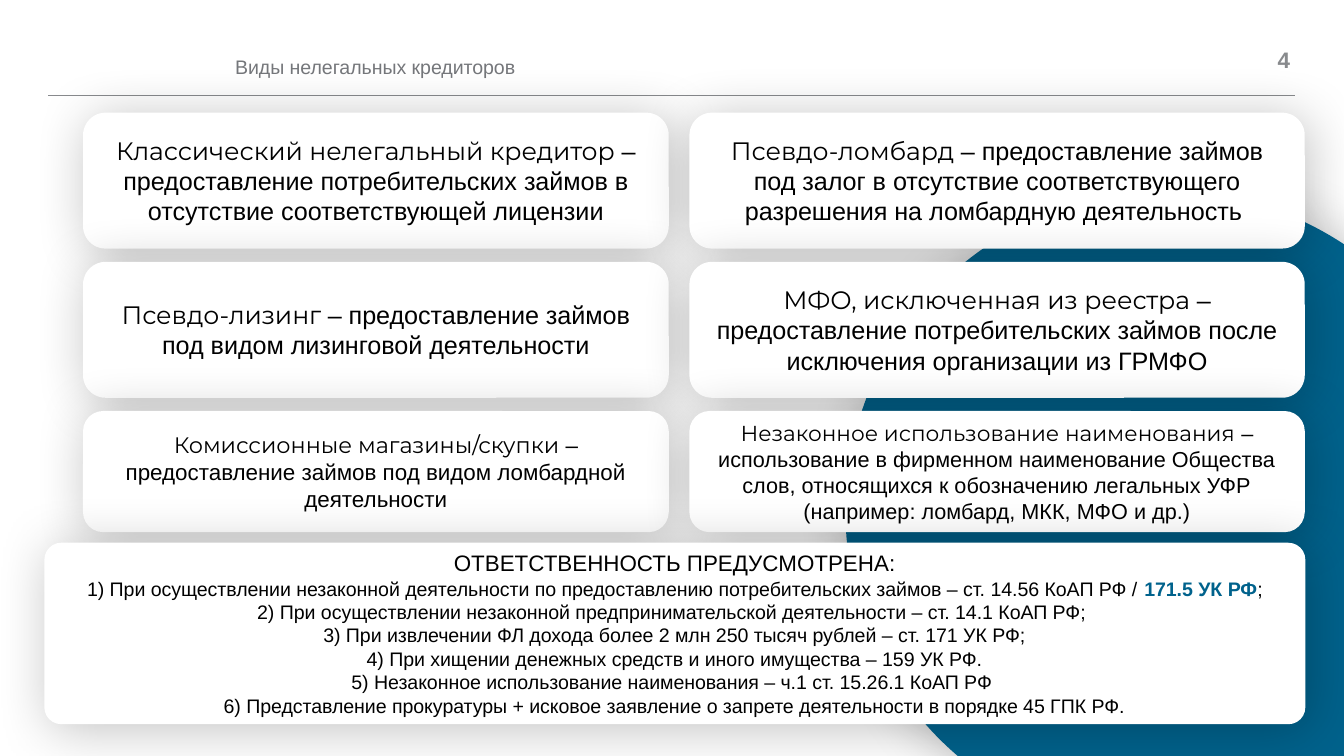
from lxml.etree import SubElement
from pptx import Presentation
from pptx.dml.color import RGBColor
from pptx.enum.shapes import MSO_CONNECTOR, MSO_SHAPE
from pptx.enum.text import MSO_ANCHOR, MSO_AUTO_SIZE, PP_ALIGN
from pptx.oxml.ns import qn
from pptx.util import Cm, Pt

COLORS = {"white": "FFFFFF", "black": "000000", "blue": "00628C",
          "rule": "888A8D", "heading": "75777B"}
BODY_FONT, TERM_FONT = "Arial", "Montserrat"

GAP = 0.25
COLUMNS = [(1.57, 11.07), (13.03, 11.63)]  # left, width
ROW_HEIGHTS = [2.57, 2.57, 2.29]
CARDS_TOP = 2.13

# Each row: (term, definition, text size) for the left and right card
CARDS = [
    [("Классический нелегальный кредитор ",
      "– предоставление потребительских займов в отсутствие соответствующей лицензии", 13.5),
     ("Псевдо-ломбард ",
      "– предоставление займов под залог в отсутствие соответствующего разрешения "
      "на ломбардную деятельность ", 13.5)],
    [("Псевдо-лизинг ",
      "– предоставление займов под видом лизинговой деятельности", 13.5),
     ("МФО, исключенная из реестра ",
      "– предоставление потребительских займов после исключения организации из ГРМФО", 13.5)],
    [("Комиссионные магазины/скупки ",
      "– предоставление займов под видом ломбардной деятельности", 12),
     ("Незаконное использование наименования ",
      "– использование в фирменном наименование Общества слов, относящихся к обозначению "
      "легальных УФР (например: ломбард, МКК, МФО и др.)", 11.6)],
]

PENALTY_HEADING = "ОТВЕТСТВЕННОСТЬ ПРЕДУСМОТРЕНА:"
KEY_ARTICLE = "171.5 УК РФ"
PENALTIES = [
    "1) При осуществлении незаконной деятельности по предоставлению потребительских займов "
    "– ст. 14.56 КоАП РФ / 171.5 УК РФ;",
    "2) При осуществлении незаконной предпринимательской деятельности – ст. 14.1 КоАП РФ; ",
    "3) При извлечении ФЛ дохода более 2 млн 250 тысяч рублей – ст. 171 УК РФ;",
    "4) При хищении денежных средств и иного имущества – 159 УК РФ.",
    "5) Незаконное использование наименования – ч.1 ст. 15.26.1 КоАП РФ ",
    "6) Представление прокуратуры + исковое заявление о запрете деятельности "
    "в порядке 45 ГПК РФ.",
]


def color(name):
    return RGBColor.from_string(COLORS[name])


def style(font, size, color_name, face=BODY_FONT, bold=False):
    font.size, font.name, font.bold = Pt(size), face, bold
    font.color.rgb = color(color_name)


def set_insets(frame, side, edge):
    frame.margin_left = frame.margin_right = Cm(side)
    frame.margin_top = frame.margin_bottom = Cm(edge)


def add_soft_shadow(shape):
    shape.shadow.inherit = False
    effects = shape._element.spPr.find(qn("a:effectLst"))
    shadow = SubElement(effects, qn("a:outerShdw"), blurRad=str(Pt(29)), dist=str(Pt(3)),
                        dir="2700000", algn="tl", rotWithShape="0")
    tint = SubElement(shadow, qn("a:srgbClr"), val=COLORS["black"])
    SubElement(tint, qn("a:alpha"), val="23000")


def add_figure(slide, kind, box, fill):
    figure = slide.shapes.add_shape(kind, *map(Cm, box))
    figure.fill.solid()
    figure.fill.fore_color.rgb = color(fill)
    figure.line.fill.background()
    add_soft_shadow(figure)
    return figure


def add_panel(slide, box):
    panel = add_figure(slide, MSO_SHAPE.ROUNDED_RECTANGLE, box, "white")
    frame = panel.text_frame
    frame.word_wrap = True
    frame.vertical_anchor = MSO_ANCHOR.MIDDLE
    set_insets(frame, 0.3, 0.1)
    return panel


def add_header(slide, box, heading, number):
    left, top, width, height = box
    bottom = top + height

    # Rule under the header
    rule = slide.shapes.add_connector(MSO_CONNECTOR.STRAIGHT, Cm(left), Cm(bottom),
                                      Cm(left + width), Cm(bottom))
    rule.line.color.rgb = color("rule")
    rule.line.width = Pt(0.5)
    SubElement(rule._element.spPr, qn("a:effectLst"))

    # Page number
    page = slide.shapes.add_textbox(Cm(left + width - 1.65), Cm(top), Cm(1.55), Cm(0.69))
    frame = page.text_frame
    set_insets(frame, 0, 0)
    frame.word_wrap = True
    frame.vertical_anchor = MSO_ANCHOR.MIDDLE
    digits = frame.paragraphs[0]
    digits.text = number
    digits.alignment = PP_ALIGN.RIGHT
    style(digits.font, 12, "rule", bold=True)

    # Heading
    title = slide.shapes.title
    title.left, title.top = Cm(left + 3.28), Cm(top + 0.12)
    title.width, title.height = Cm(15.19), Cm(0.71)
    title.text_frame.text = heading
    title.text_frame.auto_size = MSO_AUTO_SIZE.NONE
    title.text_frame.vertical_anchor = MSO_ANCHOR.MIDDLE
    line = title.text_frame.paragraphs[0]
    line.alignment = PP_ALIGN.LEFT
    style(line.font, 10.5, "heading")


def add_card(slide, box, term, definition, size):
    paragraph = add_panel(slide, box).text_frame.paragraphs[0]
    paragraph.alignment = PP_ALIGN.CENTER
    for words, face in ((term, TERM_FONT), (definition, BODY_FONT)):
        run = paragraph.add_run()
        run.text = words
        style(run.font, size, "black", face)


def add_card_grid(slide, top):
    for row, height in zip(CARDS, ROW_HEIGHTS):
        for (left, width), card in zip(COLUMNS, row):
            add_card(slide, (left, top, width, height), *card)
        top += height + GAP


def add_penalties(slide, box):
    panel = add_panel(slide, box)
    panel.adjustments[0] = 0.093
    frame = panel.text_frame
    heading = frame.paragraphs[0]
    heading.text = PENALTY_HEADING
    heading.alignment = PP_ALIGN.CENTER
    style(heading.font, 12, "black")

    for penalty in PENALTIES:
        paragraph = frame.add_paragraph()
        paragraph.alignment = PP_ALIGN.CENTER
        style(paragraph.font, 10.5, "black")
        # The key article stands out in bold blue
        for words in penalty.partition(KEY_ARTICLE):
            if words:
                run = paragraph.add_run()
                run.text = words
                key = words == KEY_ARTICLE
                style(run.font, 10.5, "blue" if key else "black", bold=key)


def main():
    deck = Presentation()
    deck.slide_width, deck.slide_height = Cm(25.4), Cm(14.29)
    slide = deck.slides.add_slide(deck.slide_layouts[5])

    # Background circle, header, cards, penalties
    add_figure(slide, MSO_SHAPE.OVAL, (15.98, 3.61, 12.14, 12.14), "blue")
    add_header(slide, (0.91, 0.79, 23.57, 1.01), "Виды нелегальных кредиторов", "4")
    add_card_grid(slide, CARDS_TOP)
    add_penalties(slide, (0.84, 10.26, 23.83, 3.43))
    deck.save("out.pptx")


if __name__ == "__main__":
    main()
